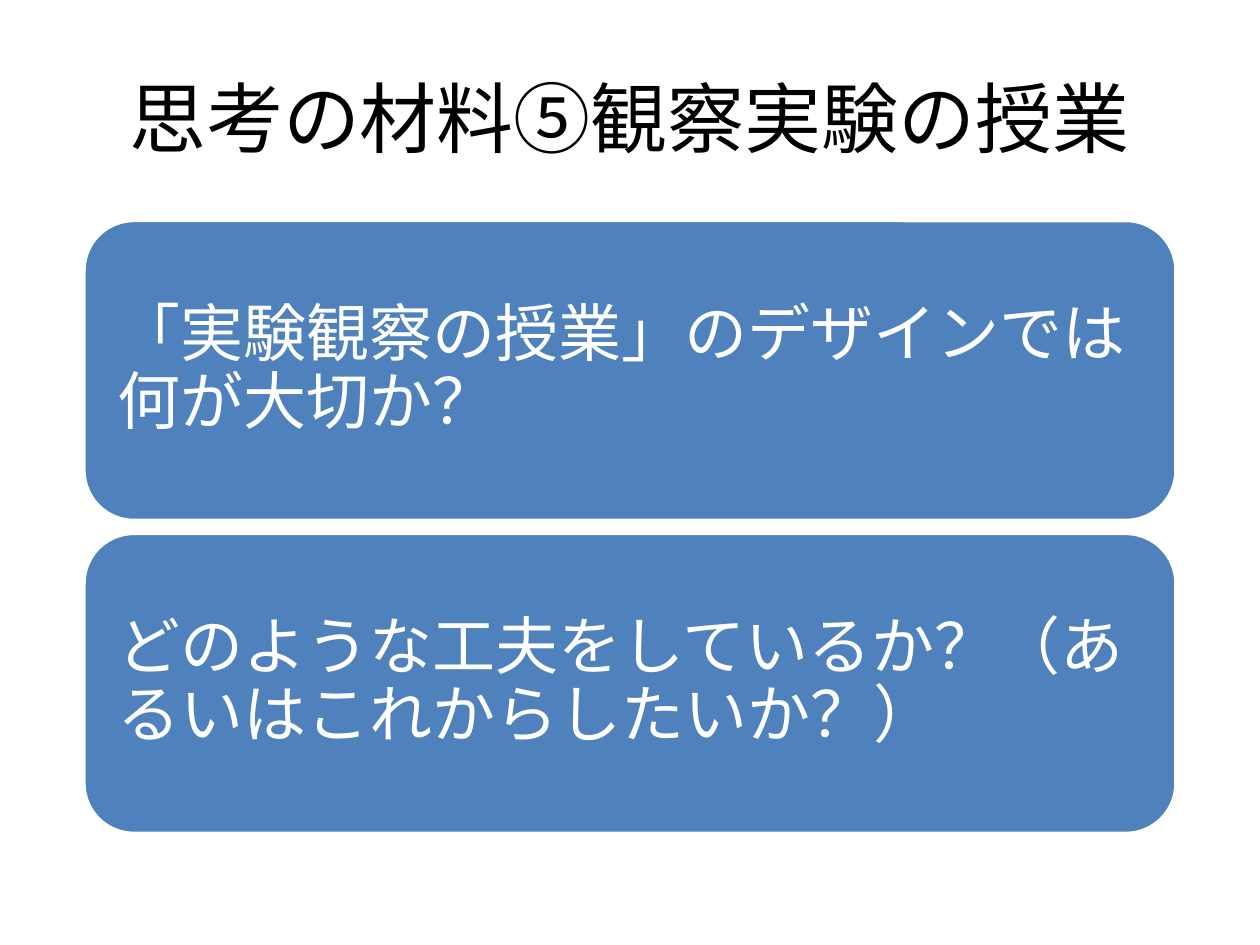
from dataclasses import dataclass

import pptx
import pptx.dml.color
import pptx.enum.shapes
import pptx.enum.text
import pptx.oxml
import pptx.oxml.ns
import pptx.util
from pptx.util import Pt


@dataclass(frozen=True)
class Theme:
    font: str = "Roboto"
    title_size: int = 44
    question_size: int = 36
    black: str = "000000"
    white: str = "FFFFFF"
    blue: str = "4F81BD"


@dataclass(frozen=True)
class Box:
    left: float
    top: float
    width: float
    height: float


THEME = Theme()
TITLE = "思考の材料⑤観察実験の授業"
TITLE_BOX = Box(36, 21.6, 648, 90)
QUESTIONS = [
    "「実験観察の授業」のデザインでは何が大切か？",
    "どのような工夫をしているか？（あるいはこれからしたいか？）",
]
FIRST_CARD = Box(48, 126, 624, 171.4)
CARD_GAP = 7.4
CARD_INSET = 10.8


def rgb(value: str) -> pptx.dml.color.RGBColor:
    return pptx.dml.color.RGBColor.from_string(value)


def set_text(text_frame, text: str, size: int, color: str, alignment) -> None:
    """Set one paragraph, with the same font for Latin and East Asian text."""
    text_frame.text = text
    text_frame.word_wrap = True
    text_frame.vertical_anchor = pptx.enum.text.MSO_ANCHOR.MIDDLE
    paragraph = text_frame.paragraphs[0]
    paragraph.alignment = alignment
    for run in paragraph.runs:
        run.font.name = THEME.font
        run.font.size = Pt(size)
        run.font.color.rgb = rgb(color)
        east_asian = pptx.oxml.parse_xml(
            f'<a:ea {pptx.oxml.ns.nsdecls("a")} typeface="{THEME.font}"/>'
        )
        run.font._element.find(pptx.oxml.ns.qn("a:latin")).addnext(east_asian)


def add_title(slide) -> None:
    title = slide.shapes.title
    title.left, title.top = Pt(TITLE_BOX.left), Pt(TITLE_BOX.top)
    title.width, title.height = Pt(TITLE_BOX.width), Pt(TITLE_BOX.height)
    set_text(title.text_frame, TITLE, THEME.title_size, THEME.black,
             pptx.enum.text.PP_ALIGN.CENTER)


def add_question_card(slide, question: str, box: Box) -> None:
    card = slide.shapes.add_shape(
        pptx.enum.shapes.MSO_SHAPE.ROUNDED_RECTANGLE,
        Pt(box.left), Pt(box.top), Pt(box.width), Pt(box.height),
    )
    card.shadow.inherit = False
    card.fill.solid()
    card.fill.fore_color.rgb = rgb(THEME.blue)
    card.line.color.rgb = rgb(THEME.white)
    card.line.width = Pt(2)
    text_frame = card.text_frame
    text_frame.margin_left = text_frame.margin_right = Pt(CARD_INSET)
    text_frame.margin_top = text_frame.margin_bottom = Pt(CARD_INSET)
    set_text(text_frame, question, THEME.question_size, THEME.white,
             pptx.enum.text.PP_ALIGN.LEFT)
    text_frame.paragraphs[0].line_spacing = 0.9


def main() -> None:
    presentation = pptx.Presentation()
    presentation.slide_width, presentation.slide_height = Pt(720), Pt(540)
    slide = presentation.slides.add_slide(
        presentation.slide_layouts.get_by_name("Title Only")
    )
    add_title(slide)
    for index, question in enumerate(QUESTIONS):
        top = FIRST_CARD.top + index * (FIRST_CARD.height + CARD_GAP)
        box = Box(FIRST_CARD.left, top, FIRST_CARD.width, FIRST_CARD.height)
        add_question_card(slide, question, box)
    presentation.save("out.pptx")


if __name__ == "__main__":
    main()
